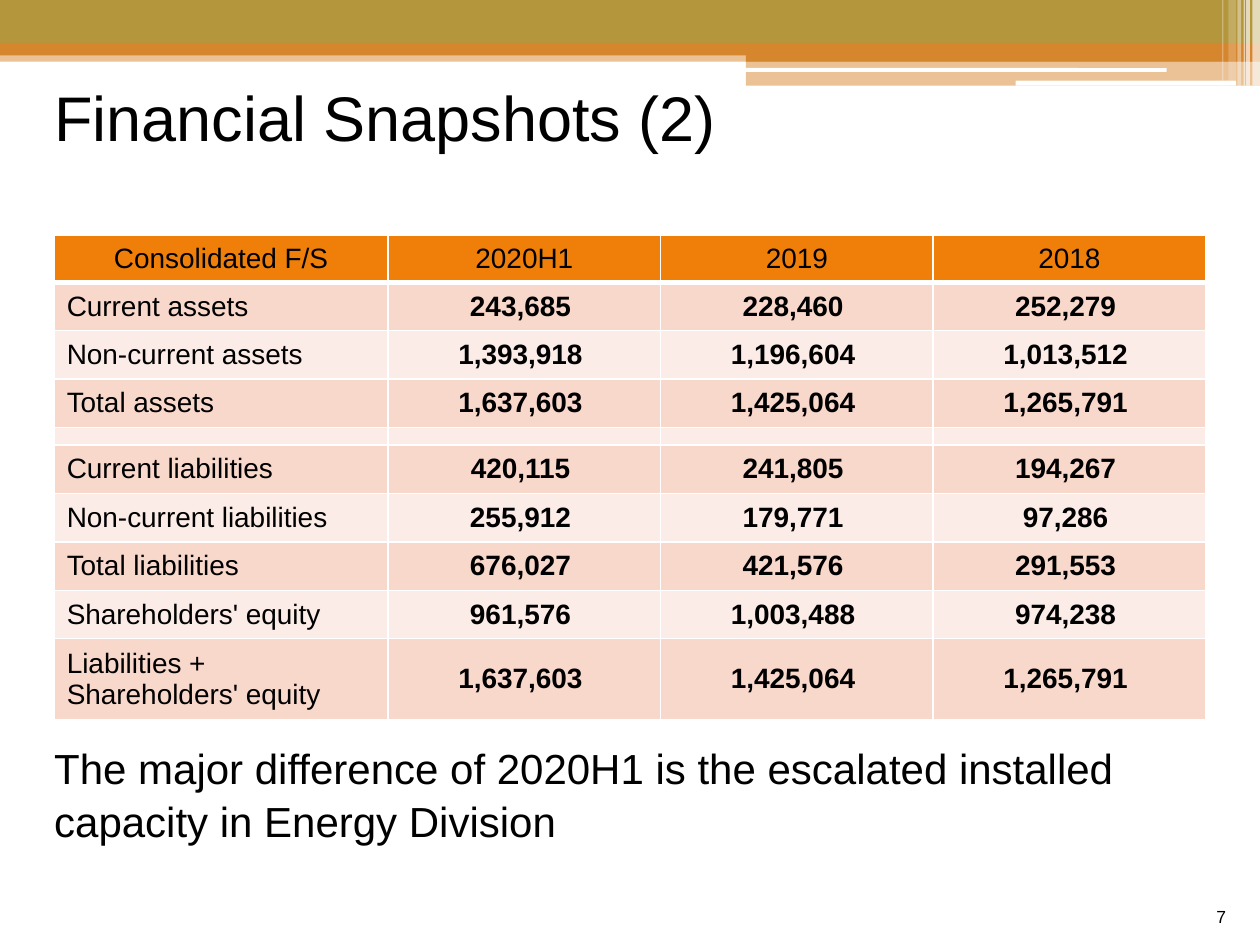
"""Build the financial snapshot slide with its balance sheet table."""
from lxml import etree
from pptx import Presentation
from pptx.dml.color import RGBColor
from pptx.enum.shapes import MSO_SHAPE
from pptx.enum.text import MSO_ANCHOR, MSO_AUTO_SIZE, PP_ALIGN
from pptx.oxml.ns import qn
from pptx.util import Inches, Pt

RECTANGLE, ROUNDED = MSO_SHAPE.RECTANGLE, MSO_SHAPE.ROUNDED_RECTANGLE
LEFT, CENTER, RIGHT = PP_ALIGN.LEFT, PP_ALIGN.CENTER, PP_ALIGN.RIGHT
TOP, MIDDLE = MSO_ANCHOR.TOP, MSO_ANCHOR.MIDDLE

THEME = {
    "font": "Arial",
    "text": "000000",
    "white": "FFFFFF",
    "olive": "B4963C",
    "orange": "D6862D",
    "header": "F07F09",
    "bands": ("F9D8CC", "FCECE7"),
    "title_size": 36,
    "body_size": 24,
    "table_size": 16,
    "number_size": 10,
}

BARS = [
    (RECTANGLE, 0, 0.4, 10, 0.09, "orange", 50),
    (RECTANGLE, 0, 0, 10, 0.34, "olive", 100),
    (RECTANGLE, 0, 0.34, 10, 0.1, "orange", 100),
    (RECTANGLE, 5.92, 0.39, 4.08, 0.1, "orange", 100),
    (RECTANGLE, 5.92, 0.48, 4.08, 0.2, "orange", 50),
    (ROUNDED, 5.91, 0.54, 3.35, 0.03, "white", 100),
    (ROUNDED, 8.06, 0.64, 1.75, 0.04, "white", 100),
    (RECTANGLE, 9.94, 0, 0.06, 0.68, "white", 65),
    (RECTANGLE, 9.89, 0, 0.03, 0.68, "white", 65),
    (RECTANGLE, 9.87, 0, 0.01, 0.68, "white", 60),
    (RECTANGLE, 9.82, 0, 0.03, 0.68, "white", 40),
    (RECTANGLE, 9.75, 0, 0.06, 0.64, "white", 20),
    (RECTANGLE, 9.7, 0, 0.01, 0.64, "white", 30),
]

HEADINGS = ("Consolidated F/S", "2020H1", "2019", "2018")
BALANCES = [
    ("Current assets", 243685, 228460, 252279),
    ("Non-current assets", 1393918, 1196604, 1013512),
    ("Total assets", 1637603, 1425064, 1265791),
    None,
    ("Current liabilities", 420115, 241805, 194267),
    ("Non-current liabilities", 255912, 179771, 97286),
    ("Total liabilities", 676027, 421576, 291553),
    ("Shareholders' equity", 961576, 1003488, 974238),
    ("Liabilities + Shareholders' equity", 1637603, 1425064, 1265791),
]


def write_text(paragraph, text, size, alignment=LEFT, bold=False):
    paragraph.alignment = alignment
    run = paragraph.add_run()
    run.text = text
    font_format = {"name": THEME["font"], "size": Pt(size), "bold": bold}
    for name, value in font_format.items():
        setattr(run.font, name, value)
    run.font.color.rgb = RGBColor.from_string(THEME["text"])


def add_border(cell, side, width):
    properties = cell._tc.get_or_add_tcPr()
    line = etree.SubElement(properties, qn(f"a:{side}"), w=str(Pt(width)))
    fill = etree.SubElement(line, qn("a:solidFill"))
    etree.SubElement(fill, qn("a:srgbClr"), val=THEME["white"])


presentation = Presentation()
presentation.slide_width, presentation.slide_height = Inches(10), Inches(7.5)
slide = presentation.slides.add_slide(presentation.slide_layouts[1])
title, body = slide.placeholders
first_position = slide.shapes._spTree.index(title._element)

for position, (kind, left, top, width, height, color, opacity) in enumerate(BARS, first_position):
    shape = slide.shapes.add_shape(kind, Inches(left), Inches(top), Inches(width), Inches(height))
    shape.shadow.inherit = False
    shape.line.fill.background()
    shape.fill.solid()
    shape.fill.fore_color.rgb = RGBColor.from_string(THEME[color])
    if opacity < 100:
        color_element = shape._element.spPr.find(qn("a:solidFill"))[0]
        etree.SubElement(color_element, qn("a:alpha"), val=str(opacity * 1000))
    slide.shapes._spTree.insert(position, shape._element)

number = slide.shapes.add_textbox(0, 0, Inches(1), Inches(1))
texts = [
    (title, (0.43, 0.62, 9.14, 1), "Financial Snapshots (2)", "title_size", LEFT),
    (body, (0.43, 5.87, 9.14, 0.8),
     "The major difference of 2020H1 is the escalated installed capacity in Energy Division",
     "body_size", LEFT),
    (number, (9.38, 7.19, 0.35, 0.17), "7", "number_size", RIGHT),
]
frame_format = {
    "margin_left": 0, "margin_top": 0, "margin_right": 0, "margin_bottom": 0,
    "vertical_anchor": TOP, "word_wrap": True, "auto_size": MSO_AUTO_SIZE.NONE,
}
for shape, box, text, size, alignment in texts:
    for name, value in zip(("left", "top", "width", "height"), box):
        setattr(shape, name, Inches(value))
    for name, value in frame_format.items():
        setattr(shape.text_frame, name, value)
    write_text(shape.text_frame.paragraphs[0], text, THEME[size], alignment)

paragraph = body.text_frame.paragraphs[0]
paragraph.line_spacing = 1.05
paragraph.space_before = Pt(0)
paragraph_properties = paragraph._p.get_or_add_pPr()
paragraph_properties.set("marL", "0")
paragraph_properties.set("indent", "0")
etree.SubElement(paragraph_properties, qn("a:buNone"))

table_width, table_height, label_width = 9.14, 3.84, 2.65
header_height, gap_height, last_height = 0.37, 0.14, 0.64
row_height = (table_height - header_height - gap_height - last_height) / 7
graphic_frame = slide.shapes.add_table(
    len(BALANCES) + 1, len(HEADINGS),
    Inches(0.43), Inches(1.87), Inches(table_width), Inches(table_height))
table = graphic_frame.table
table.horz_banding = False
for index, column in enumerate(table.columns):
    column.width = Inches((table_width - label_width) / 3 if index else label_width)

for row_index, values in enumerate([HEADINGS] + BALANCES):
    is_header = row_index == 0
    row = table.rows[row_index]
    row.height = Inches(row_height if values else gap_height)
    for column_index, cell in enumerate(row.cells):
        for side in ("lnL", "lnR", "lnT", "lnB"):
            thick = (is_header and side == "lnB") or (row_index == 1 and side == "lnT")
            add_border(cell, side, 3 if thick else 1)
        cell.fill.solid()
        color = THEME["header"] if is_header else THEME["bands"][(row_index - 1) % 2]
        cell.fill.fore_color.rgb = RGBColor.from_string(color)
        cell.vertical_anchor = MIDDLE
        paragraph = cell.text_frame.paragraphs[0]
        if values is None:
            cell.margin_top = cell.margin_bottom = 0
            etree.SubElement(paragraph._p, qn("a:endParaRPr"), sz="400")
            continue
        value = values[column_index]
        is_amount = isinstance(value, int)
        write_text(paragraph, f"{value:,} " if is_amount else value, THEME["table_size"],
                   CENTER if is_header or is_amount else LEFT, is_amount)
table.rows[0].height = Inches(header_height)
table.rows[len(BALANCES)].height = Inches(last_height)

presentation.save("out.pptx")
